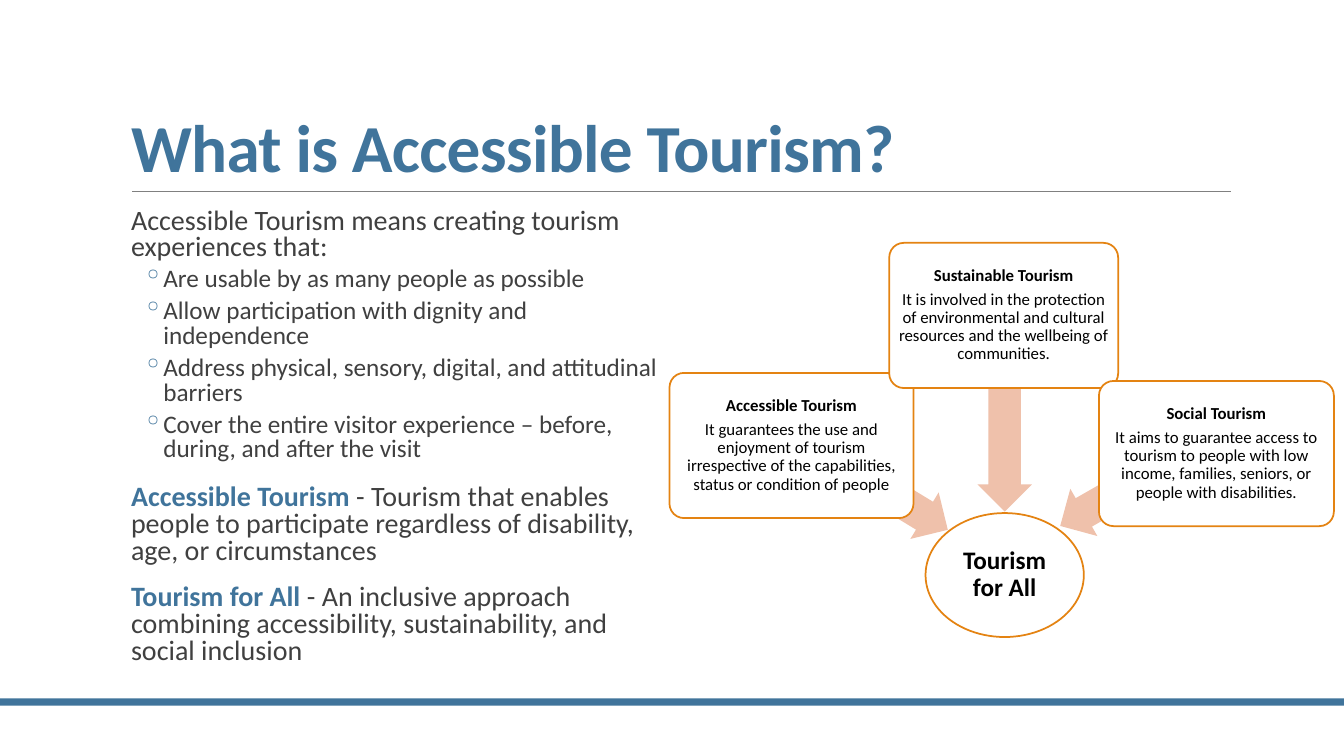
from dataclasses import dataclass

from lxml.etree import SubElement
from pptx import Presentation
from pptx.dml.color import RGBColor
from pptx.enum.shapes import MSO_CONNECTOR, MSO_SHAPE
from pptx.enum.text import MSO_ANCHOR, MSO_AUTO_SIZE, PP_ALIGN
from pptx.oxml.ns import qn
from pptx.util import Pt

EMU_PER_PX = 9144  # 100 px to the inch
FONT = "Calibri"
COLORS = {
    "blue": "40749B",
    "orange": "E48312",
    "peach": "EFC1AB",
    "rule": "808080",
    "body": "404040",
    "black": "000000",
    "white": "FFFFFF",
}


@dataclass(frozen=True)
class Box:
    left: int
    top: int
    width: int
    height: int

    def emu(self) -> list[int]:
        return [px(v) for v in (self.left, self.top, self.width, self.height)]


@dataclass(frozen=True)
class Pillar:
    heading: str
    description: str
    card: Box
    arrow: Box
    arrow_rotation: float


@dataclass(frozen=True)
class Definition:
    term: str
    meaning: str


INTRO = "Accessible Tourism means creating tourism experiences that:"
EXPERIENCES = [
    "Are usable by as many people as possible",
    "Allow participation with dignity and independence",
    "Address physical, sensory, digital, and attitudinal barriers",
    "Cover the entire visitor experience – before, during, and after the visit",
]
DEFINITIONS = [
    Definition("Accessible Tourism ", "- Tourism that enables people to participate "
               "regardless of disability, age, or circumstances"),
    Definition("Tourism for All ", "- An inclusive approach combining accessibility, "
               "sustainability, and social inclusion"),
]
PILLARS = [
    Pillar("Accessible Tourism",
           "It guarantees the use and enjoyment of tourism irrespective of the "
           "capabilities, status or condition of people",
           Box(664, 370, 242, 144), Box(788, 456, 164, 54), 211.3),
    Pillar("Sustainable Tourism",
           "It is involved in the protection of environmental and cultural resources "
           "and the wellbeing of communities.",
           Box(882, 241, 227, 144), Box(904, 388, 185, 54), 270),
    Pillar("Social Tourism",
           "It aims to guarantee access to tourism to people with low income, "
           "families, seniors, or people with disabilities.",
           Box(1090, 378, 233, 144), Box(1041, 455, 160, 54), 330.2),
]


def px(value: int) -> int:
    return value * EMU_PER_PX


def rgb(color: str) -> RGBColor:
    return RGBColor.from_string(COLORS[color])


def set_font(font, size: int, color: str, bold: bool = False) -> None:
    font.name, font.size, font.bold = FONT, Pt(size), bold
    font.color.rgb = rgb(color)


def set_spacing(paragraph, lines: float, before: int, after: int) -> None:
    paragraph.line_spacing = lines
    paragraph.space_before, paragraph.space_after = Pt(before), Pt(after)


def set_frame(frame, anchor, side: int, vertical: int) -> None:
    frame.word_wrap, frame.auto_size = True, MSO_AUTO_SIZE.NONE
    frame.vertical_anchor = anchor
    frame.margin_left = frame.margin_right = px(side)
    frame.margin_top = frame.margin_bottom = px(vertical)


def next_paragraph(frame):
    first = frame.paragraphs[0]
    return frame.add_paragraph() if first.runs else first


def add_bullet(paragraph) -> None:
    properties = paragraph._p.get_or_add_pPr()
    properties.set("marL", str(px(32)))
    properties.set("indent", str(px(-20)))
    bullet_color = SubElement(properties, qn("a:buClr"))
    SubElement(bullet_color, qn("a:srgbClr"), val=COLORS["blue"])
    SubElement(properties, qn("a:buChar"), char="◦")


def add_filled(slide, kind, box: Box, fill: str, outline: str | None = None):
    shape = slide.shapes.add_shape(kind, *box.emu())
    shape.shadow.inherit = False
    shape.fill.solid()
    shape.fill.fore_color.rgb = rgb(fill)
    if outline:
        shape.line.color.rgb = rgb(outline)
        shape.line.width = Pt(1.25)
    else:
        shape.line.fill.background()
    return shape


def add_centred(frame, text: str, size: int, bold: bool, after: int) -> None:
    paragraph = next_paragraph(frame)
    paragraph.add_run().text = text
    paragraph.alignment = PP_ALIGN.CENTER
    set_spacing(paragraph, 0.9, 0, after)
    set_font(paragraph.font, size, "black", bold)


def add_header(slide) -> None:
    title = slide.shapes.title
    title.left, title.top, title.width, title.height = Box(120, 31, 1100, 159).emu()
    set_frame(title.text_frame, MSO_ANCHOR.BOTTOM, 10, 5)
    heading = title.text_frame.paragraphs[0]
    heading.add_run().text = "What is Accessible Tourism?"
    heading.alignment = PP_ALIGN.LEFT
    set_spacing(heading, 0.85, 0, 0)
    set_font(heading.font, 48, "blue", True)
    heading._p.pPr.find(qn("a:defRPr")).set("spc", "-50")

    rule = slide.shapes.add_connector(
        MSO_CONNECTOR.STRAIGHT, px(131), px(190), px(1221), px(190))
    rule.line.color.rgb = rgb("rule")
    rule.line.width = Pt(0.5)
    SubElement(rule._element.spPr, qn("a:effectLst"))


def add_explanation(slide) -> None:
    frame = slide.shapes.add_textbox(*Box(130, 202, 530, 470).emu()).text_frame
    set_frame(frame, MSO_ANCHOR.TOP, 0, 5)

    intro = next_paragraph(frame)
    intro.add_run().text = INTRO
    set_spacing(intro, 0.8, 0, 2)
    set_font(intro.font, 20, "body")

    for experience in EXPERIENCES:
        item = next_paragraph(frame)
        item.level = 1
        item.add_run().text = experience
        add_bullet(item)
        set_spacing(item, 0.8, 2, 4)
        set_font(item.font, 18, "body")

    for definition in DEFINITIONS:
        entry = next_paragraph(frame)
        set_spacing(entry, 0.8, 12, 2)
        set_font(entry.font, 20, "body")
        term = entry.add_run()
        term.text = definition.term
        term.font.bold = True
        term.font.color.rgb = rgb("blue")
        entry.add_run().text = definition.meaning


def add_pillar(slide, pillar: Pillar) -> None:
    arrow = add_filled(slide, MSO_SHAPE.LEFT_ARROW, pillar.arrow, "peach")
    arrow.adjustments[0], arrow.adjustments[1] = 0.6, 0.5
    arrow.rotation = pillar.arrow_rotation

    card = add_filled(slide, MSO_SHAPE.ROUNDED_RECTANGLE, pillar.card, "white", "orange")
    card.adjustments[0] = 0.1
    set_frame(card.text_frame, MSO_ANCHOR.MIDDLE, 4, 4)
    add_centred(card.text_frame, pillar.heading, 12, True, 4)
    add_centred(card.text_frame, pillar.description, 12, False, 4)


def main() -> None:
    deck = Presentation()
    deck.slide_width, deck.slide_height = px(1333), px(750)
    slide = deck.slides.add_slide(deck.slide_layouts[5])

    # Heading, footer band and explanation
    add_filled(slide, MSO_SHAPE.RECTANGLE, Box(0, 693, 1333, 7), "blue")
    add_header(slide)
    add_explanation(slide)

    # Diagram: three pillars pointing to the shared goal
    goal = add_filled(slide, MSO_SHAPE.OVAL, Box(918, 509, 157, 123), "white", "orange")
    set_frame(goal.text_frame, MSO_ANCHOR.MIDDLE, 1, 1)
    add_centred(goal.text_frame, "Tourism for All", 18, True, 6)
    for pillar in PILLARS:
        add_pillar(slide, pillar)

    deck.save("out.pptx")


if __name__ == "__main__":
    main()
